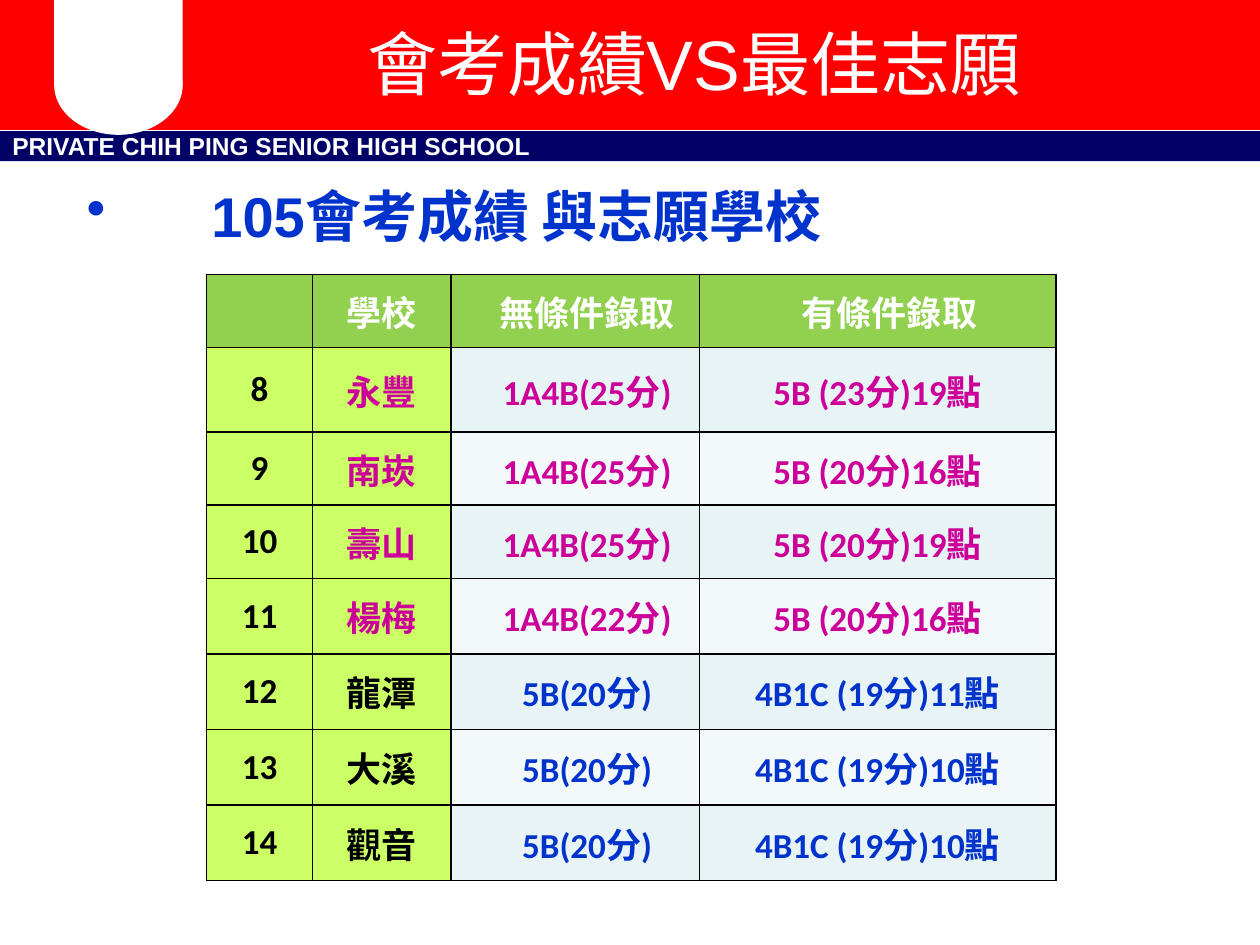
from dataclasses import dataclass

from lxml import etree
from pptx import Presentation
from pptx.dml.color import RGBColor
from pptx.enum.shapes import MSO_SHAPE
from pptx.enum.text import MSO_ANCHOR, PP_ALIGN
from pptx.oxml.ns import qn
from pptx.util import Inches, Pt

RECT, OVAL = MSO_SHAPE.RECTANGLE, MSO_SHAPE.OVAL
LEFT, CENTER = PP_ALIGN.LEFT, PP_ALIGN.CENTER
TOP, MIDDLE = MSO_ANCHOR.TOP, MSO_ANCHOR.MIDDLE


@dataclass(frozen=True)
class Theme:
    sans: str = "Arial"
    digit: str = "Calibri"
    white: str = "FFFFFF"
    black: str = "000000"
    red: str = "FF0000"
    navy: str = "000066"
    blue: str = "0033CC"
    pink: str = "CC0099"
    green: str = "92D050"
    lime: str = "CCFF66"
    bands: tuple = ("E7F3F4", "F3F9FA")
    title: int = 40
    head: int = 32
    cell: int = 20
    small: int = 14


class Deck:
    def __init__(self, slide, theme):
        self.slide, self.theme = slide, theme

    def label(self, para, text, size, color, bold=True, align=LEFT, font=None):
        para.text, para.alignment = text, align
        para.font.name = font or self.theme.sans
        para.font.size, para.font.bold = Pt(size), bold
        para.font.color.rgb = RGBColor.from_string(color)

    def shape(self, kind, box, fill, edge=0):
        item = self.slide.shapes.add_shape(kind, *map(Inches, box))
        item.shadow.inherit = False
        color = RGBColor.from_string(fill)
        item.fill.solid()
        item.fill.fore_color.rgb = color
        if edge:
            item.line.color.rgb = color
            item.line.width = Pt(edge)
        else:
            item.line.fill.background()

    def text(self, box, words, size, color, anchor=MIDDLE, hang=0, **style):
        frame = self.slide.shapes.add_textbox(*map(Inches, box)).text_frame
        frame.word_wrap, frame.vertical_anchor = True, anchor
        para = frame.paragraphs[0]
        if hang:
            props = para._p.get_or_add_pPr()
            props.set("marL", str(Inches(hang)))
            props.set("indent", str(-Inches(hang)))
            etree.SubElement(props, qn("a:buChar"), char="•")
        self.label(para, words, size, color, **style)

    def border(self, cell):
        props = cell._tc.get_or_add_tcPr()
        for spot, side in enumerate(("lnL", "lnR", "lnT", "lnB")):
            line = etree.Element(qn(f"a:{side}"), w=str(Pt(1)))
            fill = etree.SubElement(line, qn("a:solidFill"))
            etree.SubElement(fill, qn("a:srgbClr"), val=self.theme.black)
            props.insert(spot, line)

    def cell(self, cell, words, fill, color, font, indent=0):
        cell.fill.solid()
        cell.fill.fore_color.rgb = RGBColor.from_string(fill)
        self.border(cell)
        cell.vertical_anchor = MIDDLE
        cell.margin_left = cell.margin_right = Inches(0.07)
        cell.margin_top = cell.margin_bottom = 0
        para = cell.text_frame.paragraphs[0]
        if indent:
            para._p.get_or_add_pPr().set("indent", str(Inches(indent)))
        self.label(para, words, self.theme.cell, color, align=CENTER, font=font)

    def table(self, left, top, cols, rows, data, style):
        frame = self.slide.shapes.add_table(
            len(rows), len(cols), Inches(left), Inches(top),
            Inches(sum(cols)), Inches(sum(rows)))
        grid = frame.table
        grid.first_row = grid.horz_banding = False
        for col, width in zip(grid.columns, cols):
            col.width = Inches(width)
        for row, height in zip(grid.rows, rows):
            row.height = Inches(height)
        for r, record in enumerate(data):
            for c, words in enumerate(record):
                self.cell(grid.cell(r, c), words, *style(r, c))


def main():
    theme = Theme()
    show = Presentation()
    show.slide_width, show.slide_height = Inches(10), Inches(7.5)
    deck = Deck(show.slides.add_slide(show.slide_layouts[6]), theme)

    # Banner with the white tab
    deck.shape(RECT, (0, 1.04, 10, 0.24), theme.navy)
    deck.text((0, 1.04, 10, 0.24), "PRIVATE CHIH PING SENIOR HIGH SCHOOL",
              theme.small, theme.white)
    deck.shape(RECT, (0, 0, 10, 0.99), theme.red, edge=6)
    deck.shape(RECT, (0.43, -0.03, 1.02, 0.71), theme.white)
    deck.shape(OVAL, (0.43, 0.28, 1.02, 0.79), theme.white)
    deck.text((1.53, 0, 7.95, 0.99), "會考成績VS最佳志願",
              theme.title, theme.white, bold=False, align=CENTER)

    # Heading
    deck.text((0.59, 1.39, 9, 0.7), "105會考成績 與志願學校",
              theme.head, theme.blue, anchor=TOP, hang=0.99)

    # Score table
    data = [
        ("", "學校", "無條件錄取", "有條件錄取"),
        ("8", "永豐", "1A4B(25分)", "5B (23分)19點"),
        ("9", "南崁", "1A4B(25分)", "5B (20分)16點"),
        ("10", "壽山", "1A4B(25分)", "5B (20分)19點"),
        ("11", "楊梅", "1A4B(22分)", "5B (20分)16點"),
        ("12", "龍潭", "5B(20分)", "4B1C (19分)11點"),
        ("13", "大溪", "5B(20分)", "4B1C (19分)10點"),
        ("14", "觀音", "5B(20分)", "4B1C (19分)10點"),
    ]
    last_pink = 4

    def style(r, c):
        """Fill, text colour, font and first-line indent of a cell."""
        indent = 0.19 if c == 2 or (r == 0 and c == 3) else 0
        if r == 0:
            return theme.green, theme.white, theme.sans, indent
        fill = theme.lime if c < 2 else theme.bands[(r - 1) % 2]
        if c == 0:
            color = theme.black
        elif r <= last_pink:
            color = theme.pink
        else:
            color = theme.black if c == 1 else theme.blue
        return fill, color, theme.digit, indent

    deck.table(1.64, 2.18, [0.84, 1.1, 1.97, 2.83],
               [0.58, 0.67, 0.58, 0.58] + [0.6] * 4, data, style)

    show.save("out.pptx")


if __name__ == "__main__":
    main()
